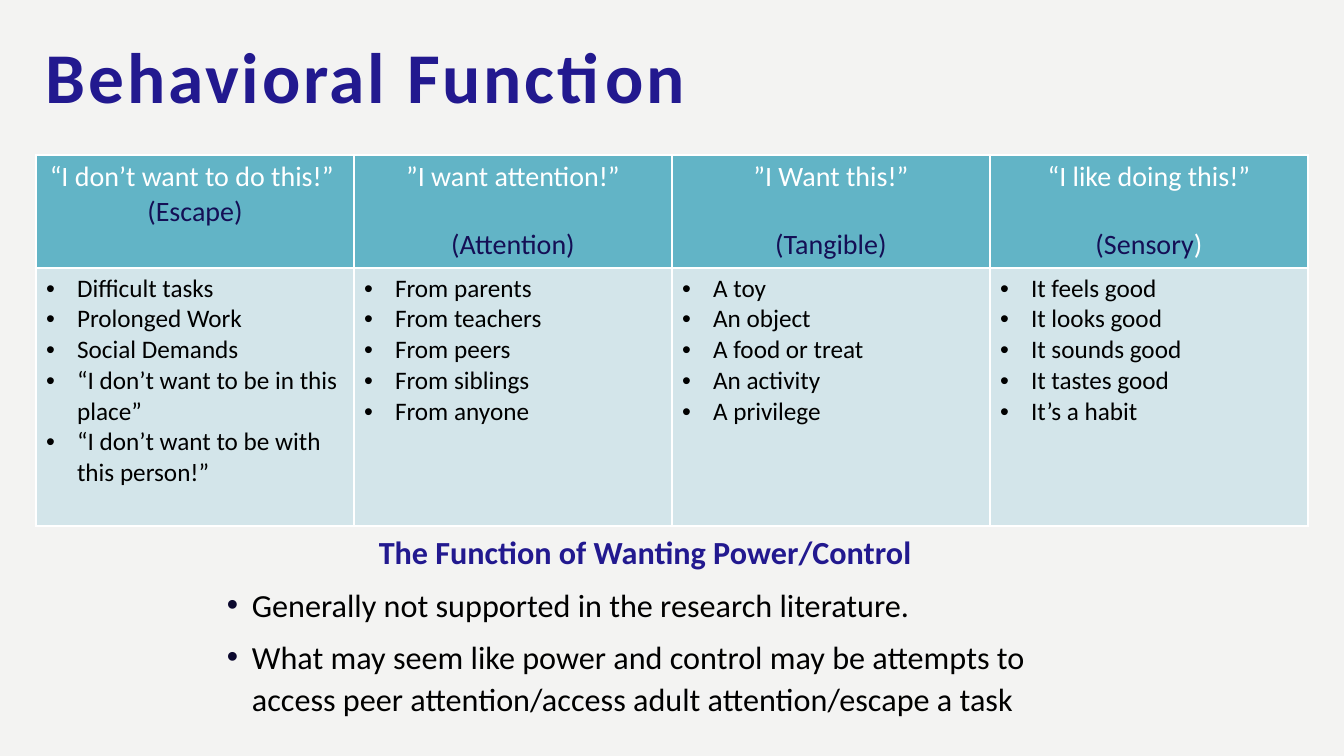
from lxml.etree import SubElement
from pptx import Presentation
from pptx.dml.color import RGBColor
from pptx.enum.text import MSO_ANCHOR, PP_ALIGN
from pptx.oxml.ns import qn
from pptx.util import Pt

TITLE = "Behavioral Function"
# Quote, gap above the function in points, function as (text, is_dark) pieces, examples
FUNCTIONS = [
    ("“I don’t want to do this!” ", 0, [("(Escape)", True)],
     ["Difficult tasks", "Prolonged Work", "Social Demands",
      "“I don’t want to be in this place”", "“I don’t want to be with this person!”"]),
    ("”I want attention!”", 24, [("(Attention)", True)],
     ["From parents", "From teachers", "From peers", "From siblings", "From anyone"]),
    ("”I Want this!”", 24, [("(Tangible)", True)],
     ["A toy", "An object", "A food or treat", "An activity", "A privilege"]),
    ("“I like doing this!”", 24, [("(Sensory", True), (")", False)],
     ["It feels good", "It looks good", "It sounds good", "It tastes good", "It’s a habit"]),
]
POWER_HEADING = "The Function of Wanting Power/Control"
POWER_POINTS = [
    "Generally not supported in the research literature.",
    "What may seem like power and control may be attempts to "
    "access peer attention/access adult attention/escape a task",
]

BACKGROUND = RGBColor(0xF3, 0xF3, 0xF2)
INDIGO = RGBColor(0x22, 0x19, 0x8F)
NAVY = RGBColor(0x14, 0x0F, 0x55)
BULLET_NAVY = RGBColor(0x0B, 0x08, 0x2E)
TEAL = RGBColor(0x62, 0xB4, 0xC6)
PALE_TEAL = RGBColor(0xD3, 0xE5, 0xEA)
WHITE = RGBColor(0xFF, 0xFF, 0xFF)
BLACK = RGBColor(0, 0, 0)

FONT = "Calibri"
SLIDE_SIZE = (1344, 756)
TITLE_BOX = (36, 37, 1122, 110)
POWER_BOX = (217, 524, 857, 232)
TABLE_LEFT, TABLE_TOP = 36, 155
COLUMN_WIDTH = 318
ROW_HEIGHTS = (113, 258)


def px(length):
    return round(length * 914400 / 100.8)


def style(paragraph, size, color, bold=False):
    font = paragraph.font
    font.name, font.size, font.bold = FONT, Pt(size), bold
    font.color.rgb = color


def add_bullet(paragraph, indent, color):
    properties = paragraph._p.get_or_add_pPr()
    properties.set("marL", str(px(indent)))
    properties.set("indent", str(-px(indent)))
    bullet_color = SubElement(properties, qn("a:buClr"))
    SubElement(bullet_color, qn("a:srgbClr"), val=str(color))
    SubElement(properties, qn("a:buFont"), typeface="Arial")
    SubElement(properties, qn("a:buChar"), char="•")


def add_border(cell):
    properties = cell._tc.get_or_add_tcPr()
    for side in ("a:lnL", "a:lnR", "a:lnT", "a:lnB"):
        line = SubElement(properties, qn(side), w=str(Pt(1)))
        fill = SubElement(line, qn("a:solidFill"))
        SubElement(fill, qn("a:srgbClr"), val=str(WHITE))


def add_paragraphs(frame, count):
    return [frame.paragraphs[0]] + [frame.add_paragraph() for _ in range(count - 1)]


def add_text_frame(slide, box):
    frame = slide.shapes.add_textbox(*map(px, box)).text_frame
    frame.word_wrap = True
    frame.vertical_anchor = MSO_ANCHOR.TOP
    return frame


def add_title(slide):
    title = add_text_frame(slide, TITLE_BOX).paragraphs[0]
    title.line_spacing = 0.9
    style(title, 51, INDIGO, bold=True)
    run = title.add_run()
    run.text = TITLE
    run.font._element.set("spc", "200")


def add_function_table(slide):
    table = slide.shapes.add_table(
        len(ROW_HEIGHTS), len(FUNCTIONS), px(TABLE_LEFT), px(TABLE_TOP),
        px(COLUMN_WIDTH * len(FUNCTIONS)), px(sum(ROW_HEIGHTS))).table
    table.first_row = table.horz_banding = False
    for row, height in zip(table.rows, ROW_HEIGHTS):
        row.height = px(height)

    for column, (quote, gap, function, examples) in enumerate(FUNCTIONS):
        table.columns[column].width = px(COLUMN_WIDTH)
        header, body = table.cell(0, column), table.cell(1, column)
        for cell, color in ((header, TEAL), (body, PALE_TEAL)):
            add_border(cell)
            cell.fill.solid()
            cell.fill.fore_color.rgb = color

        # Header: the quote and the function it stands for
        quote_line, function_line = add_paragraphs(header.text_frame, 2)
        for line in (quote_line, function_line):
            line.alignment = PP_ALIGN.CENTER
            style(line, 20, WHITE)
        quote_line.text = quote
        function_line.space_before = Pt(gap)
        for text, is_dark in function:
            run = function_line.add_run()
            run.text = text
            run.font.color.rgb = NAVY if is_dark else WHITE

        # Body: examples
        for line, example in zip(add_paragraphs(body.text_frame, len(examples)), examples):
            line.text = example
            add_bullet(line, 31, BLACK)
            style(line, 18, BLACK)


def add_power_note(slide):
    frame = add_text_frame(slide, POWER_BOX)
    heading, *points = add_paragraphs(frame, 1 + len(POWER_POINTS))
    for line in (heading, *points):
        line.line_spacing = 1.1
        line.space_before = Pt(7)
    heading.text = POWER_HEADING
    heading.alignment = PP_ALIGN.CENTER
    style(heading, 23, INDIGO, bold=True)
    for line, point in zip(points, POWER_POINTS):
        line.text = point
        add_bullet(line, 25, BULLET_NAVY)
        style(line, 23, BLACK)


def main():
    presentation = Presentation()
    presentation.slide_width, presentation.slide_height = map(px, SLIDE_SIZE)
    slide = presentation.slides.add_slide(presentation.slide_layouts[6])
    slide.background.fill.solid()
    slide.background.fill.fore_color.rgb = BACKGROUND
    add_title(slide)
    add_power_note(slide)
    add_function_table(slide)
    presentation.save("out.pptx")


if __name__ == "__main__":
    main()
